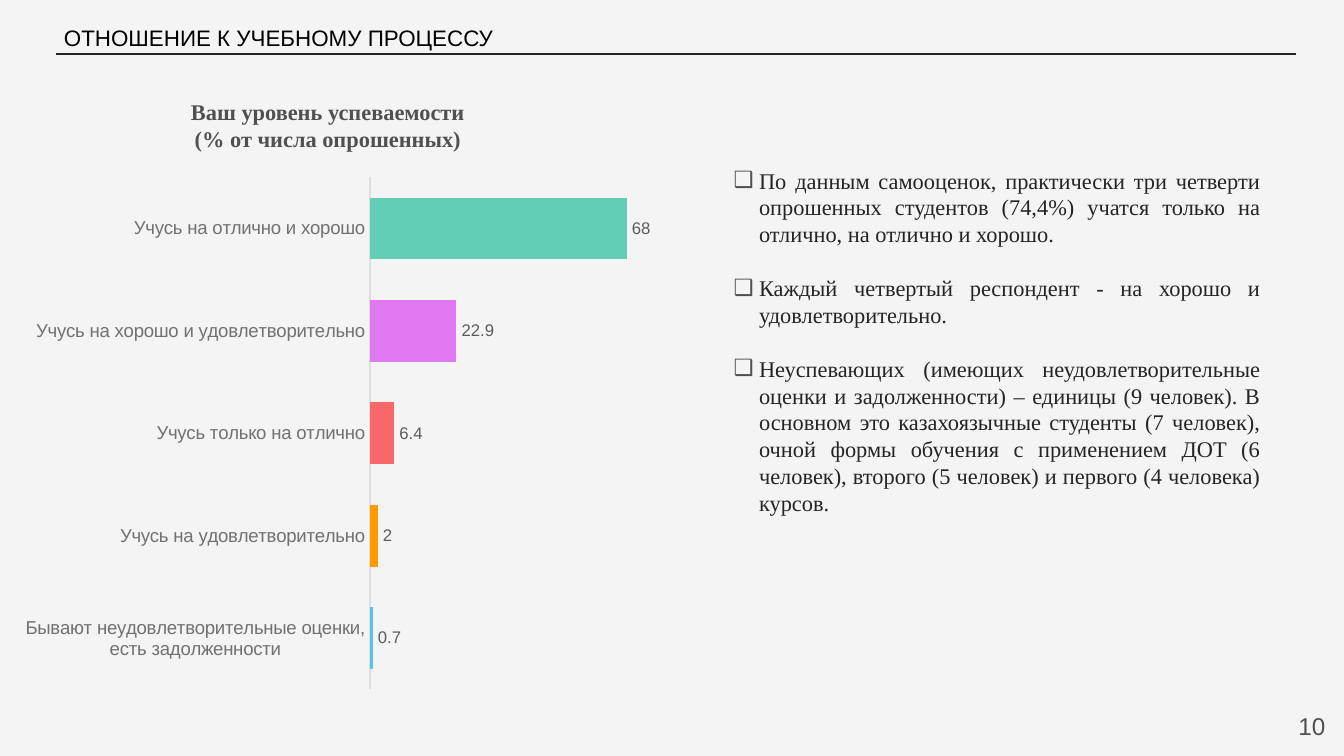
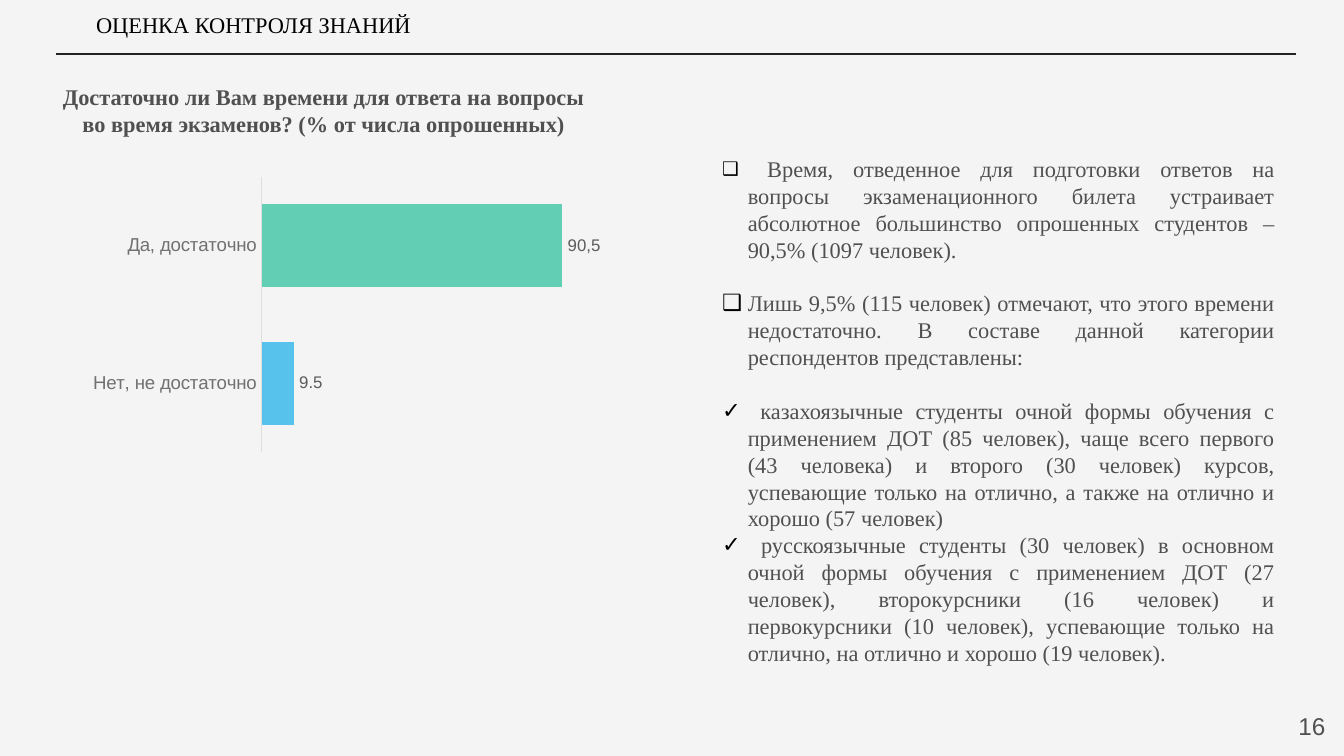
from dataclasses import dataclass
from typing import NamedTuple

from lxml.etree import SubElement
from pptx import Presentation
from pptx.chart.data import CategoryChartData
from pptx.dml.color import RGBColor
from pptx.enum.chart import XL_CHART_TYPE, XL_LABEL_POSITION, XL_TICK_LABEL_POSITION, XL_TICK_MARK
from pptx.enum.shapes import MSO_CONNECTOR
from pptx.enum.text import MSO_ANCHOR, MSO_AUTO_SIZE, PP_ALIGN
from pptx.oxml import parse_xml
from pptx.oxml.ns import nsdecls, qn
from pptx.util import Inches, Pt

WIDTH = Inches(10)
HEIGHT = WIDTH * 9 // 16
COLUMN = ROW = WIDTH / 100

PAPER = RGBColor(0xF4, 0xF4, 0xF4)
BLACK = RGBColor(0, 0, 0)
INK = RGBColor(0x24, 0x24, 0x24)
GRAY = RGBColor(0x50, 0x50, 0x50)
CATEGORY_GRAY = RGBColor(0x71, 0x71, 0x71)
VALUE_GRAY = RGBColor(0x5B, 0x5B, 0x5B)
AXIS_GRAY = RGBColor(0xDE, 0xDE, 0xDE)
GREEN = RGBColor(0x62, 0xCF, 0xB5)
BLUE = RGBColor(0x57, 0xC2, 0xEC)
ORANGE = RGBColor(0xFF, 0x99, 0x00)
RED = RGBColor(0xF7, 0x68, 0x6B)
VIOLET = RGBColor(0xE0, 0x78, 0xF1)

SANS, SERIF = "Arial", "Times New Roman"
LINE_PITCH = Pt(14.4)
HANG = 1.9


class Box(NamedTuple):
    left: float
    top: float
    width: float
    height: float

    def lengths(self) -> tuple[int, int, int, int]:
        return (round(self.left * COLUMN), round(self.top * ROW),
                round(self.width * COLUMN), round(self.height * ROW))


class Share(NamedTuple):
    x: float
    y: float
    w: float
    h: float


class Bar(NamedTuple):
    category: str
    value: float
    color: RGBColor
    label: str = ""


class Finding(NamedTuple):
    text: str
    bullet: str = "❑"
    gap: bool = True
    lead: str = ""


@dataclass(frozen=True)
class BarPanel:
    box: Box
    plot: Share
    maximum: float
    bars: list[Bar]


@dataclass(frozen=True)
class Findings:
    box: Box
    color: RGBColor
    bullet_color: RGBColor
    indent: float
    items: list[Finding]


@dataclass(frozen=True)
class SurveyPage:
    number: str
    title: str
    title_box: Box
    title_font: str
    heading: list[str]
    heading_box: Box
    panel: BarPanel
    findings: Findings


def style(font, name: str, size: float, color: RGBColor, bold: bool = False) -> None:
    font.name, font.size, font.bold = name, Pt(size), bold
    font.color.rgb = color


def add_span(para, text: str, name: str, size: float, color: RGBColor, bold: bool = False) -> None:
    span = para.add_run()
    span.text = text
    style(span.font, name, size, color, bold)


def add_frame(page, box: Box):
    frame = page.shapes.add_textbox(*box.lengths()).text_frame
    frame.word_wrap = True
    frame.margin_left = frame.margin_right = round(COLUMN)
    frame.margin_top = frame.margin_bottom = round(ROW)
    return frame


def next_para(frame, index: int, align: PP_ALIGN):
    para = frame.add_paragraph() if index else frame.paragraphs[0]
    para.alignment = align
    return para


def add_title(page, survey: SurveyPage) -> None:
    title = page.shapes.title
    title.left, title.top, title.width, title.height = survey.title_box.lengths()
    frame = title.text_frame
    frame.word_wrap = True
    frame.auto_size = MSO_AUTO_SIZE.NONE
    frame.vertical_anchor = MSO_ANCHOR.TOP
    add_span(next_para(frame, 0, PP_ALIGN.LEFT), survey.title, survey.title_font, 12, BLACK)


def add_rule(page) -> None:
    left, right, level = round(4.15 * COLUMN), round(96.4 * COLUMN), round(4.02 * ROW)
    rule = page.shapes.add_connector(MSO_CONNECTOR.STRAIGHT, left, level, right, level)
    rule.line.color.rgb = INK
    rule.line.width = Pt(0.75)
    SubElement(rule._element.spPr, qn("a:effectLst"))


def add_number(page, number: str) -> None:
    frame = add_frame(page, Box(93.6, 51.9, 6, 4.3))
    add_span(next_para(frame, 0, PP_ALIGN.RIGHT), number, SANS, 13, GRAY)


def add_heading(page, survey: SurveyPage) -> None:
    frame = add_frame(page, survey.heading_box)
    for index, text in enumerate(survey.heading):
        para = next_para(frame, index, PP_ALIGN.CENTER)
        para.line_spacing = LINE_PITCH
        add_span(para, text, SERIF, 12, GRAY, True)


def set_bullet(para, bullet: str, color: RGBColor, indent: float) -> None:
    props = para._p.get_or_add_pPr()
    props.set("marL", str(round(indent * COLUMN)))
    props.set("indent", str(round(-HANG * COLUMN)))
    SubElement(SubElement(props, qn("a:buClr")), qn("a:srgbClr")).set("val", str(color))
    SubElement(props, qn("a:buFont")).set("typeface", SANS)
    SubElement(props, qn("a:buChar")).set("char", bullet)


def add_findings(page, findings: Findings) -> None:
    frame = add_frame(page, findings.box)
    for index, item in enumerate(findings.items):
        para = next_para(frame, index, PP_ALIGN.JUSTIFY)
        para.line_spacing = LINE_PITCH
        para.space_after = LINE_PITCH if item.gap else Pt(0)
        set_bullet(para, item.bullet, findings.bullet_color, findings.indent)
        if item.lead:
            add_span(para, item.lead, SANS, 10, findings.color)
        add_span(para, item.text, SERIF, 12, findings.color)


def place_plot(chart, plot: Share) -> None:
    area = chart.element.find(".//" + qn("c:plotArea"))
    for layout in area.findall(qn("c:layout")):
        area.remove(layout)
    modes = "".join(f'<c:{side}Mode val="edge"/>' for side in "xy")
    shares = "".join(f'<c:{name} val="{value}"/>' for name, value in plot._asdict().items())
    area.insert(0, parse_xml(
        f'<c:layout {nsdecls("c")}><c:manualLayout><c:layoutTarget val="inner"/>'
        f"{modes}{shares}</c:manualLayout></c:layout>"))


def add_bars(page, panel: BarPanel) -> None:
    data = CategoryChartData()
    data.categories = [bar.category for bar in panel.bars]
    data.add_series("Series 1", [bar.value for bar in panel.bars])
    chart = page.shapes.add_chart(XL_CHART_TYPE.BAR_CLUSTERED, *panel.box.lengths(), data).chart
    chart.has_legend = chart.has_title = False
    style(chart.font, SANS, 10, INK)
    place_plot(chart, panel.plot)

    categories = chart.category_axis
    categories.major_tick_mark = categories.minor_tick_mark = XL_TICK_MARK.NONE
    categories.tick_label_position = XL_TICK_LABEL_POSITION.NEXT_TO_AXIS
    categories.has_major_gridlines = False
    categories.format.line.color.rgb = AXIS_GRAY
    categories.format.line.width = Pt(0.75)
    style(categories.tick_labels.font, SANS, 10, CATEGORY_GRAY)

    values = chart.value_axis
    values.minimum_scale, values.maximum_scale = 0, panel.maximum
    values.has_major_gridlines = False
    values.visible = False

    plot = chart.plots[0]
    plot.gap_width = 66
    plot.vary_by_categories = False
    series = plot.series[0]
    series.format.fill.solid()
    series.format.fill.fore_color.rgb = GREEN
    labels = series.data_labels
    labels.show_value = True
    labels.position = XL_LABEL_POSITION.OUTSIDE_END
    style(labels.font, SANS, 9, VALUE_GRAY)
    for index, bar in enumerate(panel.bars):
        point = series.points[index]
        point.format.fill.solid()
        point.format.fill.fore_color.rgb = bar.color
        if bar.label:
            add_span(point.data_label.text_frame.paragraphs[0], bar.label, SANS, 9, VALUE_GRAY)
            point.data_label.position = XL_LABEL_POSITION.OUTSIDE_END


SURVEY_PAGES = [
    SurveyPage(
        number="10",
        title="ОТНОШЕНИЕ К УЧЕБНОМУ ПРОЦЕССУ",
        title_box=Box(3.75, 1.3, 93.5, 3),
        title_font=SANS,
        heading=["Ваш уровень успеваемости", "(% от числа опрошенных)"],
        heading_box=Box(3.7, 6.3, 41.4, 6.1),
        panel=BarPanel(Box(1.9, 12.4, 48.1, 39.7), Share(0.53, 0.02, 0.47, 0.96), 80, [
            Bar("Бывают неудовлетворительные оценки, есть задолженности", 0.7, BLUE),
            Bar("Учусь на удовлетворительно", 2, ORANGE),
            Bar("Учусь только на отлично", 6.4, RED),
            Bar("Учусь на хорошо и удовлетворительно", 22.9, VIOLET),
            Bar("Учусь на отлично и хорошо", 68, GREEN),
        ]),
        findings=Findings(Box(51.8, 11.4, 43, 39.7), INK, GRAY, 3.7, [
            Finding("По данным самооценок, практически три четверти опрошенных студентов "
                    "(74,4%) учатся только на отлично, на отлично и хорошо."),
            Finding("Каждый четвертый респондент - на хорошо и удовлетворительно."),
            Finding("Неуспевающих (имеющих неудовлетворительные оценки и задолженности) – "
                    "единицы (9 человек). В основном это казахоязычные студенты (7 человек), "
                    "очной формы обучения с применением ДОТ (6 человек), второго (5 человек) "
                    "и первого (4 человека) курсов.", gap=False),
        ]),
    ),
    SurveyPage(
        number="16",
        title="ОЦЕНКА КОНТРОЛЯ ЗНАНИЙ",
        title_box=Box(6.15, 0.3, 89.7, 3),
        title_font=SERIF,
        heading=["Достаточно ли Вам времени для ответа на вопросы во время экзаменов? "
                 "(% от числа опрошенных)"],
        heading_box=Box(3.1, 5.2, 42, 6.1),
        panel=BarPanel(Box(3.1, 13.1, 42, 21.2), Share(0.39, 0, 0.6, 0.97), 100, [
            Bar("Нет, не достаточно", 9.5, BLUE),
            Bar("Да, достаточно", 88.8, GREEN, "90,5"),
        ]),
        findings=Findings(Box(52.75, 10.55, 43.1, 42.6), GRAY, BLACK, HANG, [
            Finding("Время, отведенное для подготовки ответов на вопросы экзаменационного "
                    "билета устраивает абсолютное большинство опрошенных студентов – "
                    "90,5% (1097 человек).", lead=" "),
            Finding("Лишь 9,5% (115 человек) отмечают, что этого времени недостаточно. "
                    "В составе данной категории респондентов представлены:"),
            Finding(" казахоязычные студенты очной формы обучения с применением ДОТ "
                    "(85 человек), чаще всего первого (43 человека) и второго (30 человек) "
                    "курсов, успевающие только на отлично, а также на отлично и хорошо "
                    "(57 человек)", "✓", gap=False),
            Finding(" русскоязычные студенты (30 человек) в основном очной формы обучения "
                    "с применением ДОТ (27 человек), второкурсники (16 человек) и "
                    "первокурсники (10 человек), успевающие только на отлично, на отлично "
                    "и хорошо (19 человек).", "✓", gap=False),
        ]),
    ),
]


def main() -> None:
    deck = Presentation()
    deck.slide_width, deck.slide_height = WIDTH, HEIGHT
    backdrop = deck.slide_master.background.fill
    backdrop.solid()
    backdrop.fore_color.rgb = PAPER
    title_only = deck.slide_layouts[5]
    for survey in SURVEY_PAGES:
        page = deck.slides.add_slide(title_only)
        add_rule(page)
        add_number(page, survey.number)
        add_findings(page, survey.findings)
        add_heading(page, survey)
        add_bars(page, survey.panel)
        add_title(page, survey)
    deck.save("out.pptx")


if __name__ == "__main__":
    main()
